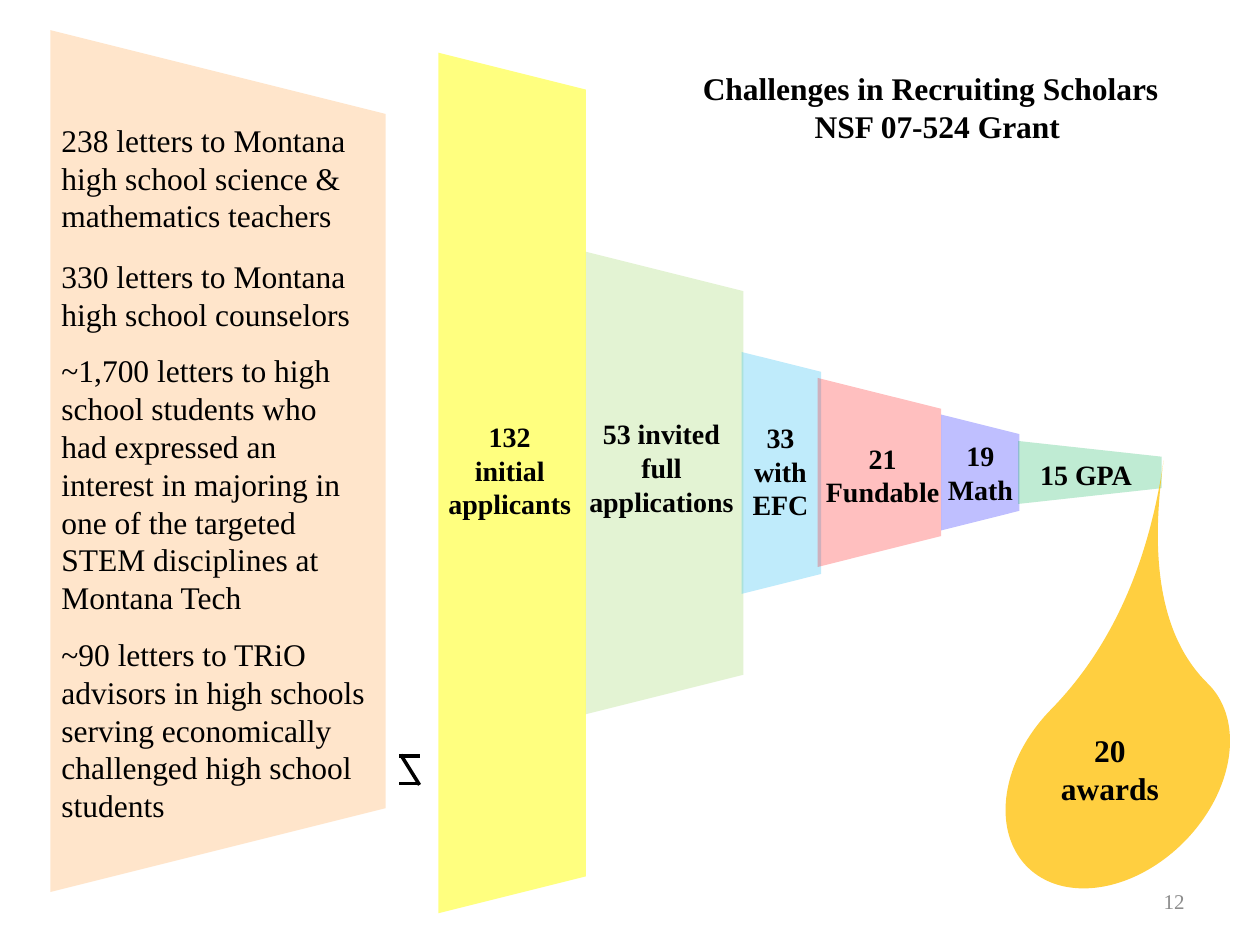
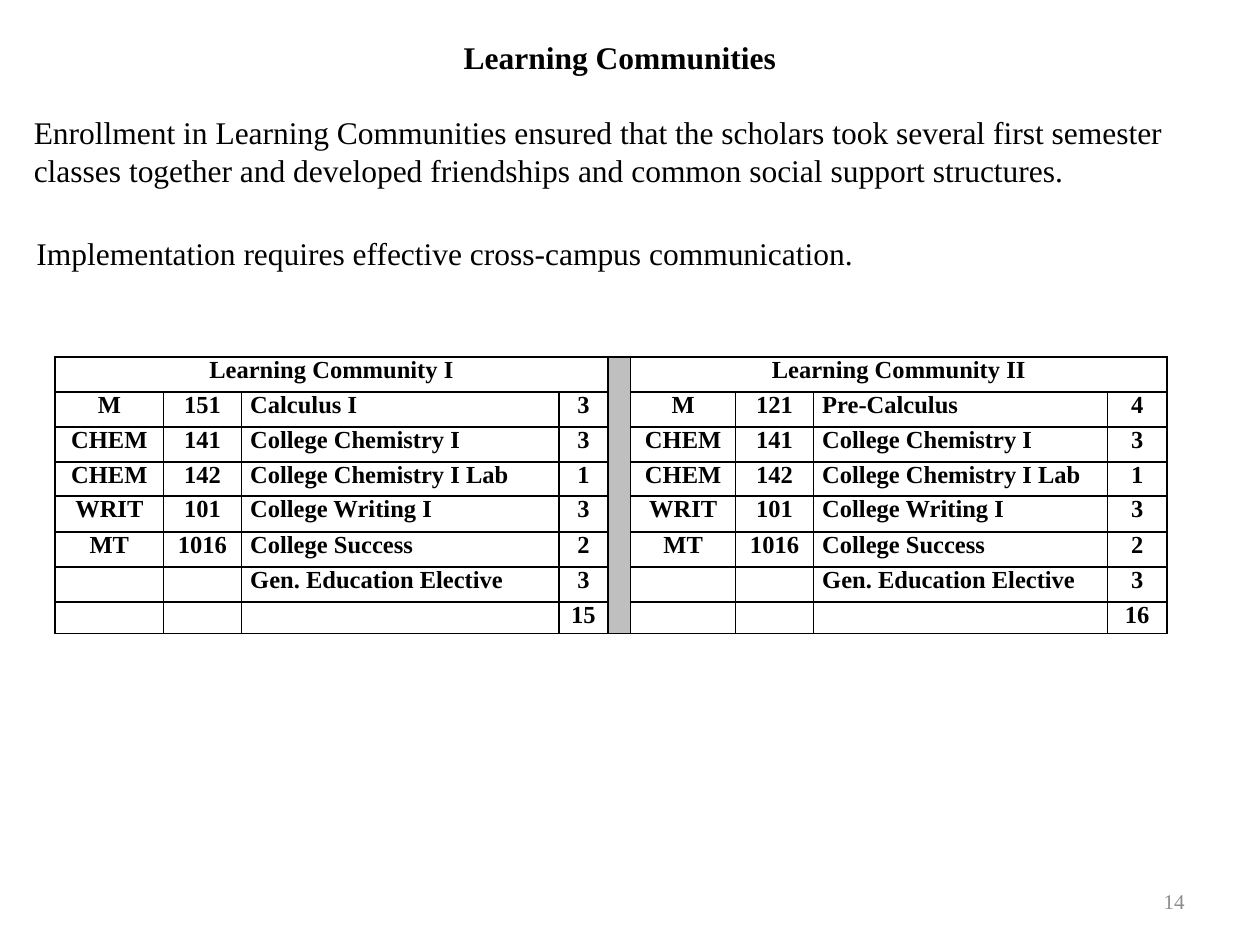
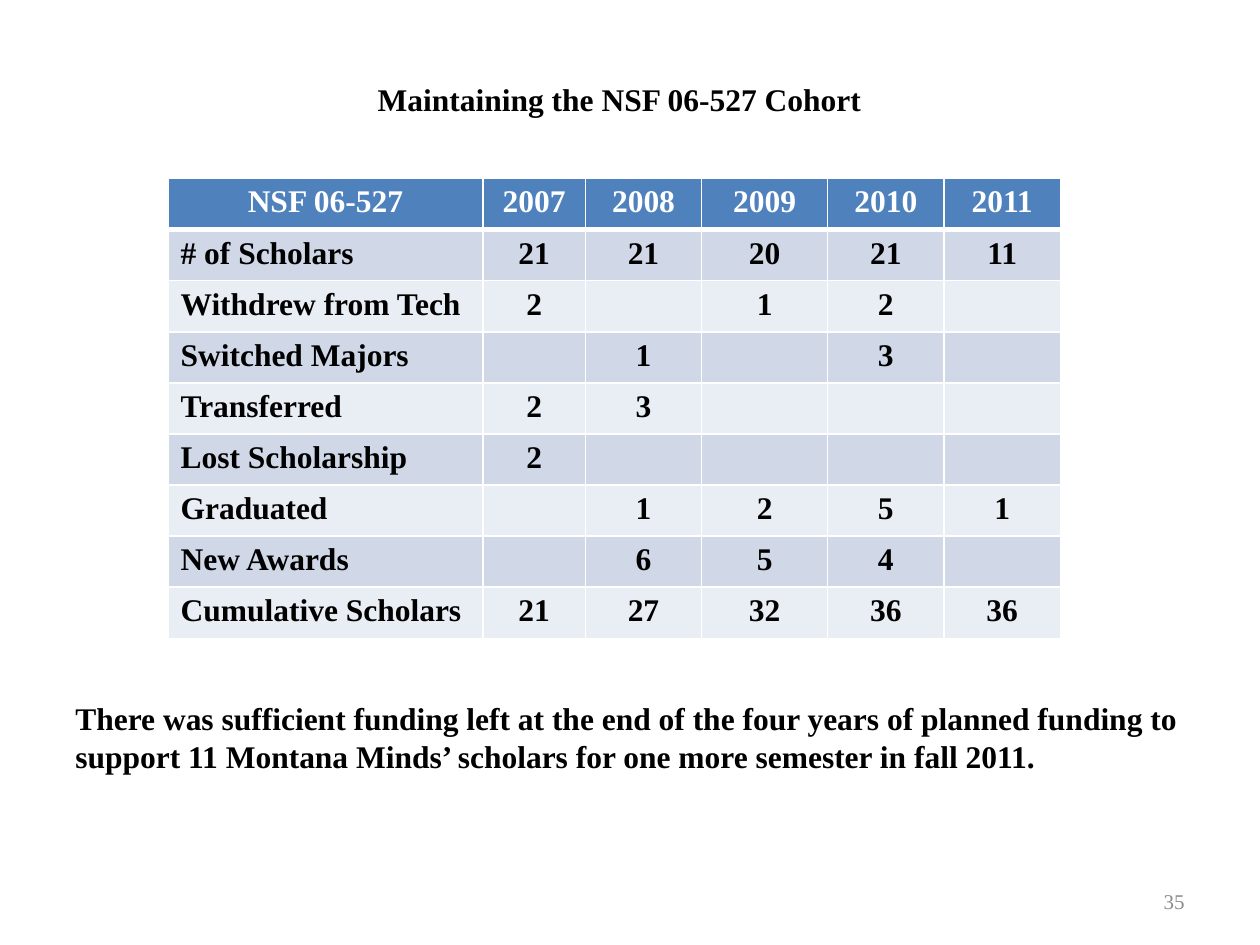
from lxml import etree
from pptx import Presentation
from pptx.dml.color import RGBColor
from pptx.enum import shapes, text
from pptx.oxml.ns import qn
from pptx.util import Pt

COLORS = {
    "black": "000000", "white": "FFFFFF", "page number": "8C8C8C",
    "peach": "FFCC99", "yellow": "FFFF00", "lime": "92D050", "sky": "00B0F0",
    "red": "FF0000", "blue": "0000FF", "green": "00B050", "gold": "FFC000",
    "divider": "BFBFBF", "header": "4F81BD", "band": "D0D8E8", "light band": "E9EDF4",
}
FONT = "Times New Roman"
LEFT, CENTER, RIGHT = text.PP_ALIGN.LEFT, text.PP_ALIGN.CENTER, text.PP_ALIGN.RIGHT
TOP, MIDDLE = text.MSO_ANCHOR.TOP, text.MSO_ANCHOR.MIDDLE

# left, middle height, width, height, colour, opacity in percent
FUNNEL = [
    (28.8, 263.5, 191.5, 492.5, "peach", 50),
    (250.5, 276, 84.25, 491.75, "yellow", 50),
    (334.75, 276, 90, 264.25, "lime", 25),
    (423.75, 270.25, 45.5, 138.25, "sky", 25),
    (467.25, 270, 70.5, 108, "red", 25),
    (537.75, 270, 44.75, 66.25, "blue", 25),
    (581.75, 270, 82, 36, "green", 25),
]
# lines, left, top, width, height
STAGE_LABELS = [
    (["132", "initial applicants"], 246.25, 236.25, 90, 65.5),
    (["53 invited", "full", "applications"], 326.5, 234.75, 103, 65.5),
    (["33 with EFC"], 414.75, 236.75, 62.5, 65.5),
    (["21 Fundable"], 462.25, 248.5, 84.25, 46),
    (["19 Math"], 533.75, 247, 53, 46),
    (["15 GPA"], 582.5, 257.75, 76.25, 26.5),
]
LETTERS = [
    ("238 letters to Montana high school science & mathematics teachers",
     65.5, 185.75, 72.75),
    ("330 letters to Montana high school counselors", 143.25, 210.25, 51),
    ("~1,700 letters to high school students who had expressed an interest in "
     "majoring in one of the targeted STEM disciplines at Montana Tech",
     197.25, 185.75, 159.75),
    ("~90 letters to TRiO advisors in high schools serving economically "
     "challenged high school students", 359.25, 198, 116.75),
]
SIGMA_STROKES = [(240, 432, 228, 432), (240, 447.75, 228, 447.75),
                 (239.75, 448.5, 229, 431.25)]

SHARED_COURSES = [
    ["CHEM", "141", "College Chemistry I", "3"],
    ["CHEM", "142", "College Chemistry I Lab", "1"],
    ["WRIT", "101", "College Writing I", "3"],
    ["MT", "1016", "College Success", "2"],
    ["", "", "Gen. Education Elective", "3"],
]
COHORT = [
    ["NSF 06-527", "2007", "2008", "2009", "2010", "2011"],
    ["# of Scholars", "21", "21", "20", "21", "11"],
    ["Withdrew from Tech", "2", "", "1", "2", ""],
    ["Switched Majors", "", "1", "", "3", ""],
    ["Transferred", "2", "3", "", "", ""],
    ["Lost Scholarship", "2", "", "", "", ""],
    ["Graduated", "", "1", "2", "5", "1"],
    ["New Awards", "", "6", "5", "4", ""],
    ["Cumulative Scholars", "21", "27", "32", "36", "36"],
]


def rgb(name):
    return RGBColor.from_string(COLORS[name])


def write(para, words, size=18, bold=False, color="black", align=LEFT, before=0):
    para.alignment = align
    if before:
        para.space_before = Pt(before)
    if not words:
        # An empty paragraph keeps its line height in its end mark.
        etree.SubElement(para._p, qn("a:endParaRPr"), sz=str(size * 100))
        return
    span = para.add_run()
    span.text = words
    span.font.name, span.font.size, span.font.bold = FONT, Pt(size), bold
    span.font.color.rgb = rgb(color)


def add_text(page, lines, left, top, width, height, anchor=TOP, **style):
    box = page.shapes.add_textbox(Pt(left), Pt(top), Pt(width), Pt(height))
    frame = box.text_frame
    frame.word_wrap = True
    frame.vertical_anchor = anchor
    for index, words in enumerate(lines):
        para = frame.add_paragraph() if index else frame.paragraphs[0]
        write(para, words, **style)
    return frame


def add_page(deck, number):
    page = deck.slides.add_slide(deck.slide_layouts[6])
    add_text(page, [str(number)], 516.25, 500.5, 167.75, 28.75, anchor=MIDDLE,
             size=12, color="page number", align=RIGHT)
    return page


def add_tinted_shape(page, kind, left, top, width, height, color, opacity, rotation):
    shape = page.shapes.add_shape(kind, Pt(left), Pt(top), Pt(width), Pt(height))
    shape.shadow.inherit = False
    shape.rotation = rotation
    shape.line.fill.background()
    shape.fill.solid()
    shape.fill.fore_color.rgb = rgb(color)
    tint = shape._element.spPr.find(".//" + qn("a:srgbClr"))
    etree.SubElement(tint, qn("a:alpha"), val=str(opacity * 1000))
    return shape


def add_funnel_stage(page, left, middle, width, height, color, opacity):
    """Draw a trapezoid on its side; the size is the one seen after the turn."""
    add_tinted_shape(page, shapes.MSO_SHAPE.TRAPEZOID, left + (width - height) / 2,
                     middle - width / 2, height, width, color, opacity, 90)


def add_stroke(page, *ends):
    stroke = page.shapes.add_connector(shapes.MSO_CONNECTOR.STRAIGHT, *map(Pt, ends))
    stroke.line.width = Pt(2)
    stroke.line.color.rgb = rgb("black")
    etree.SubElement(stroke._element.spPr, qn("a:effectLst"))


def set_borders(cell, color, **widths):
    """Give the sides L, R, T and B their widths, placed before the cell's fill."""
    properties = cell._tc.get_or_add_tcPr()
    for index, (side, width) in enumerate(widths.items()):
        line = etree.Element(qn("a:ln" + side), w=str(Pt(width)))
        fill = etree.SubElement(line, qn("a:solidFill"))
        etree.SubElement(fill, qn("a:srgbClr"), val=COLORS[color])
        properties.insert(index, line)


def add_grid(page, rows, left, top, columns, heights, size, border,
             colors_of_row, left_columns, insets=(7.2, 3.6), header_rule=1):
    """Add a bold table; left_columns are flush left below the first row."""
    frame = page.shapes.add_table(len(rows), len(columns), Pt(left), Pt(top),
                                  Pt(sum(columns)), Pt(sum(heights)))
    table = frame.table
    table.first_row = table.horz_banding = False
    for column, width in zip(table.columns, columns):
        column.width = Pt(width)
    for r, (row, height) in enumerate(zip(rows, heights)):
        table.rows[r].height = Pt(height)
        fill, ink = colors_of_row(r)
        for c, words in enumerate(row):
            cell = table.cell(r, c)
            cell.margin_left = cell.margin_right = Pt(insets[0])
            cell.margin_top = cell.margin_bottom = Pt(insets[1])
            if fill:
                cell.fill.solid()
                cell.fill.fore_color.rgb = rgb(fill)
            else:
                cell.fill.background()
            set_borders(cell, border, L=1, R=1, T=header_rule if r == 1 else 1,
                        B=header_rule if r == 0 else 1)
            write(cell.text_frame.paragraphs[0], words, size=size, bold=True, color=ink,
                  align=LEFT if r and c in left_columns else CENTER)
    return table


def build_recruiting(deck):
    page = add_page(deck, 12)
    for stage in FUNNEL:
        add_funnel_stage(page, *stage)
    for label in STAGE_LABELS:
        add_text(page, *label, size=16, bold=True, align=CENTER)
    for words, top, width, height in LETTERS:
        add_text(page, [words], 28, top, width, height)
    for ends in SIGMA_STROKES:
        add_stroke(page, *ends)
    drop = add_tinted_shape(page, shapes.MSO_SHAPE.TEAR, 565.25, 389.5, 147, 107.25,
                            "gold", 75, 314.4)
    drop.adjustments[0] = 2
    add_text(page, ["20 awards"], 598.25, 414, 72, 51, bold=True, align=CENTER)
    title = add_text(page, ["Challenges in Recruiting Scholars", "NSF 07-524 Grant"],
                     394.5, 36, 282.25, 51, bold=True, align=CENTER)
    title.paragraphs[0].alignment = LEFT


def build_communities(deck):
    page = add_page(deck, 14)
    intro = add_text(page, ["Learning Communities"], 12.25, 18, 684, 94.25,
                     bold=True, align=CENTER)
    write(intro.add_paragraph(),
          "Enrollment in Learning Communities ensured that the scholars took several "
          "first semester classes together and developed friendships and common "
          "social support structures.", before=21.5)
    add_text(page, ["Implementation requires effective cross-campus communication."],
             13.75, 130.25, 606.25, 28.75)

    first = [["M", "151", "Calculus I", "3"], *SHARED_COURSES, ["", "", "", "15"]]
    second = [["M", "121", "Pre-Calculus", "4"], *SHARED_COURSES, ["", "", "", "16"]]
    rows = [["Learning Community I", "", "", "", "", "Learning Community II", "", "", ""]]
    rows += [one + [""] + two for one, two in zip(first, second)]
    table = add_grid(page, rows, 31.5, 204, [62, 44.5, 181.5, 28, 13, 60, 44.5, 168, 34],
                     [20, 20, 20, 19.5, 20.5, 20, 20, 18], 14, "black",
                     lambda row: (None, "black"), (2, 7), insets=(5, 0))
    for start in (0, 5):
        table.cell(0, start).merge(table.cell(0, start + 3))
    divider = table.cell(0, 4)
    divider.merge(table.cell(len(rows) - 1, 4))
    divider.fill.solid()
    divider.fill.fore_color.rgb = rgb("divider")


def cohort_colors(row):
    if row == 0:
        return "header", "white"
    return ("band" if row % 2 else "light band"), "black"


def build_cohort(deck):
    page = add_page(deck, 35)
    add_text(page, ["Maintaining the NSF 06-527 Cohort"], 18, 42, 672, 30,
             bold=True, align=CENTER)
    add_grid(page, COHORT, 96, 102, [180, 58.5, 66.5, 72, 66.5, 66.5],
             [29.2] * len(COHORT), 18, "white", cohort_colors, (0,), header_rule=3)
    add_text(page, ["There was sufficient funding left at the end of the four years of "
                    "planned funding to support 11 Montana Minds’ scholars for one more "
                    "semester in fall 2011."], 36, 396, 654, 51, bold=True)


def main():
    deck = Presentation()
    deck.slide_width, deck.slide_height = Pt(720), Pt(540)
    build_recruiting(deck)
    build_communities(deck)
    build_cohort(deck)
    deck.save("out.pptx")


if __name__ == "__main__":
    main()
